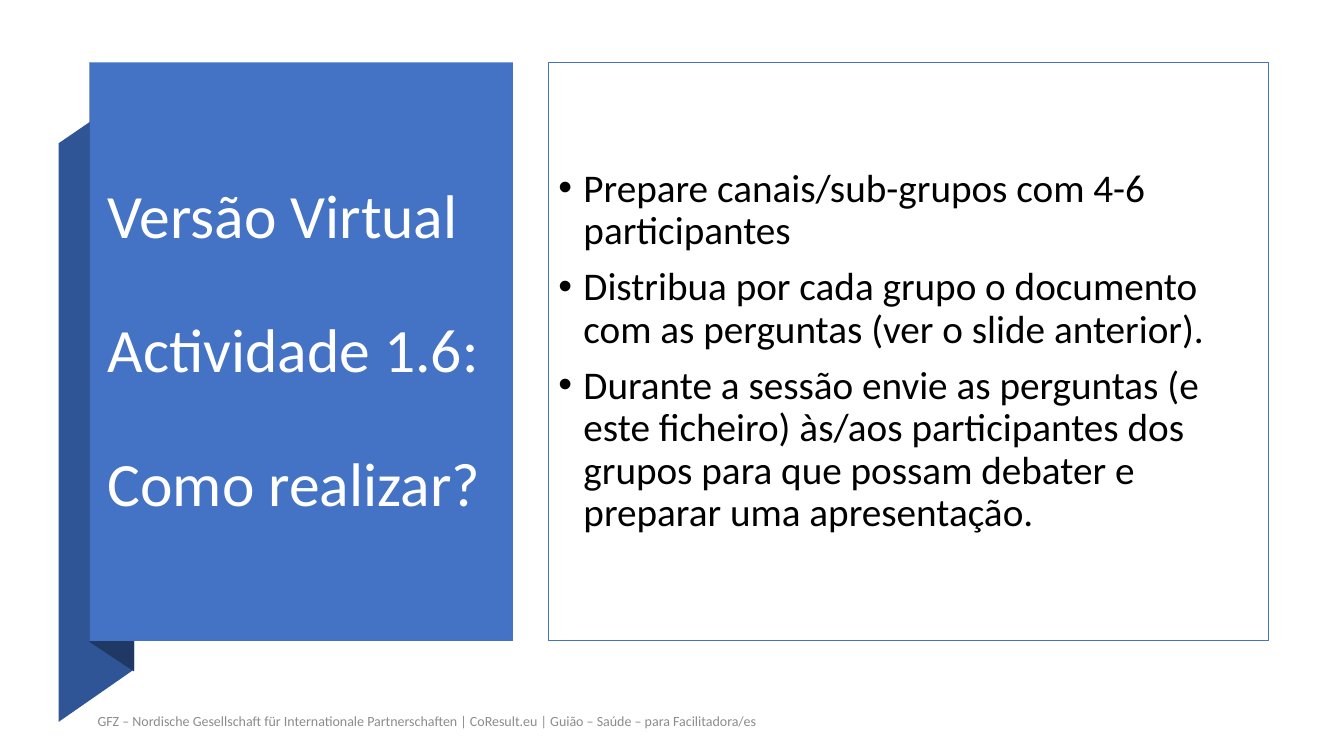
"""Build a slide with a folded title panel and a bulleted text frame."""
from typing import NamedTuple

from lxml import etree
from pptx import Presentation
from pptx import util as u
from pptx.dml.color import RGBColor
from pptx.enum import shapes, text
from pptx.oxml.ns import qn

HUES = {"panel": "4472C4", "fold": "2F5597", "shade": "203864",
        "white": "FFFFFF", "black": "000000", "grey": "8C8C8C"}

TITLE = ["Versão Virtual", "Actividade 1.6:", "Como realizar?"]
STEPS = [
    "Prepare canais/sub-grupos com 4-6 participantes",
    "Distribua por cada grupo o documento com as perguntas (ver o slide anterior).",
    "Durante a sessão envie as perguntas (e este ficheiro) às/aos participantes dos "
    "grupos para que possam debater e preparar uma apresentação.",
]
FOOTER = ["GFZ – Nordische Gesellschaft für Internationale Partnerschaften | CoResult.eu | "
          "Guião – Saúde – para Facilitadora/es"]


class Box(NamedTuple):
    """Place and size in centimetres."""
    left: float
    top: float
    width: float
    height: float


class Fold(NamedTuple):
    """Colour and corners of a ribbon fold in centimetres."""
    hue: str
    points: list[tuple[float, float]]


class Pane(NamedTuple):
    """Rectangle with a fill and an optional outline."""
    box: Box
    fill: str
    line: str | None = None


FOLDS = [
    Fold("fold", [(1.48, 18.19), (3.38, 16.87), (3.38, 2.31), (1.48, 3.61)]),
    Fold("shade", [(2.26, 16.18), (3.38, 16.92), (3.38, 2.29), (2.26, 1.57)]),
]
PANES = [
    Pane(Box(2.26, 1.57, 10.67, 14.58), "panel"),
    Pane(Box(13.82, 1.57, 18.14, 14.58), "white", "panel"),
]


def color(name: str) -> RGBColor:
    """Look up a named colour."""
    return RGBColor.from_string(HUES[name])


def paint(shape, fill: str, line: str | None = None) -> None:
    """Set fill and outline and drop the shadow."""
    shape.shadow.inherit = False
    shape.fill.solid()
    shape.fill.fore_color.rgb = color(fill)
    if line:
        shape.line.color.rgb = color(line)
        shape.line.width = u.Pt(0.75)
    else:
        shape.line.fill.background()


def draw_fold(slide, fold: Fold) -> None:
    """Draw one ribbon fold."""
    start, *rest = [(u.Cm(x), u.Cm(y)) for x, y in fold.points]
    path = slide.shapes.build_freeform(*start)
    path.add_line_segments(rest, close=True)
    paint(path.convert_to_shape(), fold.hue)


def draw_pane(slide, pane: Pane):
    """Draw one rectangle and return it."""
    shape = slide.shapes.add_shape(shapes.MSO_SHAPE.RECTANGLE, *map(u.Cm, pane.box))
    paint(shape, pane.fill, pane.line)
    return shape


def add_dot(para) -> None:
    """Give a paragraph a hanging bullet."""
    props = para._p.get_or_add_pPr()
    props.set("marL", str(u.Cm(0.635)))
    props.set("indent", str(-u.Cm(0.635)))
    etree.SubElement(props, qn("a:buFont"), typeface="Arial")
    etree.SubElement(props, qn("a:buChar"), char="•")


def write(shape, lines: list[str], *, size: float, hue: str, gap: float = 0,
          after: float = 0, lead: float = 1.0, dots: bool = False) -> None:
    """Write left-aligned, vertically centred paragraphs."""
    frame = shape.text_frame
    frame.word_wrap = True
    frame.auto_size = text.MSO_AUTO_SIZE.NONE
    frame.vertical_anchor = text.MSO_ANCHOR.MIDDLE
    for i, line in enumerate(lines):
        para = frame.add_paragraph() if i else frame.paragraphs[0]
        if dots:
            add_dot(para)
        para.alignment = text.PP_ALIGN.LEFT
        para.line_spacing = lead
        para.space_before = u.Pt(gap if i else 0)
        para.space_after = u.Pt(after)
        run = para.add_run()
        run.text = line
        run.font.name = "Calibri"
        run.font.size = u.Pt(size)
        run.font.color.rgb = color(hue)


def main() -> None:
    """Build and save the slide."""
    deck = Presentation()
    deck.slide_width, deck.slide_height = u.Cm(33.87), u.Cm(19.05)
    slide = deck.slides.add_slide(deck.slide_layouts[5])

    for fold in FOLDS:
        draw_fold(slide, fold)
    _, body = [draw_pane(slide, pane) for pane in PANES]
    write(body, STEPS, size=28, hue="black", gap=10, lead=0.9, dots=True)

    title = slide.shapes.title
    title.left, title.top, title.width, title.height = map(
        u.Cm, Box(2.46, 2.46, 10.24, 12.85))
    slide.shapes._spTree.append(title._element)
    write(title, TITLE, size=44, hue="white", gap=48, lead=0.9)

    foot = slide.shapes.add_textbox(*map(u.Cm, Box(2.21, 17.73, 18.77, 0.89)))
    write(foot, FOOTER, size=10, hue="grey", after=6)
    deck.save("out.pptx")


if __name__ == "__main__":
    main()
